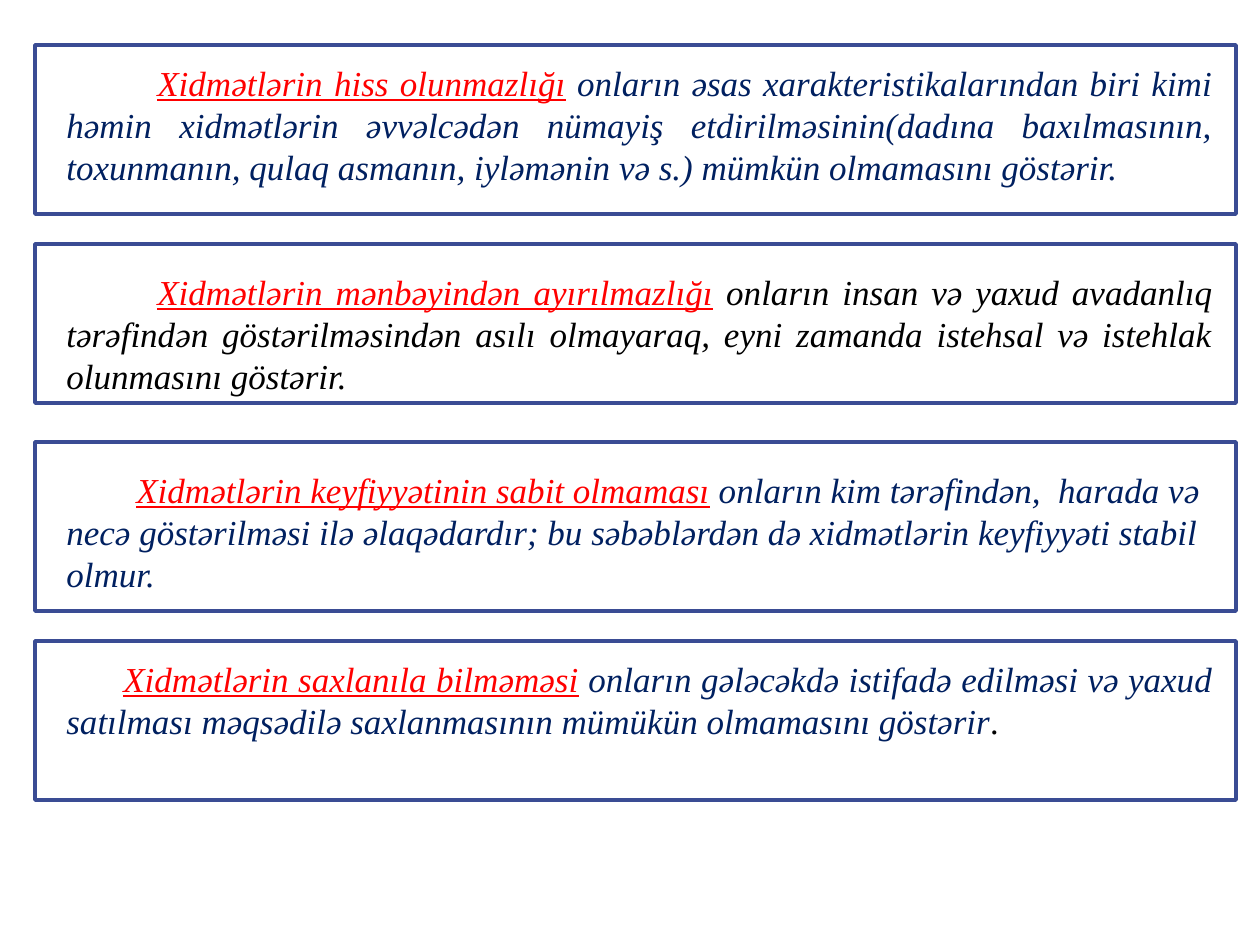
from dataclasses import dataclass

from pptx import Presentation
from pptx import util as u
from pptx.dml import color
from pptx.enum import shapes, text

PX = u.Inches(1) / 126


def emu(px):
    return u.Emu(round(px * PX))


def rgb(value):
    return color.RGBColor.from_string(value)


@dataclass(frozen=True)
class Theme:
    font: str = "Times New Roman"
    size: int = 20
    term: str = "FF0000"
    navy: str = "002060"
    black: str = "000000"
    panel: str = "FFFFFF"
    border: str = "3A4C94"
    border_width: int = 2


class SlideBuilder:
    def __init__(self, slide, theme):
        self.slide = slide
        self.theme = theme

    def panel(self, left, top, width, height):
        shape = self.slide.shapes.add_shape(
            shapes.MSO_SHAPE.RECTANGLE, *map(emu, (left, top, width, height)))
        shape.shadow.inherit = False
        shape.fill.solid()
        shape.fill.fore_color.rgb = rgb(self.theme.panel)
        shape.line.color.rgb = rgb(self.theme.border)
        shape.line.width = u.Pt(self.theme.border_width)

    def definition(self, left, top, width, height, indent, alignment, runs):
        shape = self.slide.shapes.add_textbox(
            *map(emu, (left, top, width, height)))
        frame = shape.text_frame
        frame.word_wrap = True
        frame.auto_size = text.MSO_AUTO_SIZE.SHAPE_TO_FIT_TEXT
        paragraph = frame.paragraphs[0]
        paragraph.alignment = alignment
        properties = paragraph._p.get_or_add_pPr()
        properties.set("marL", "0")
        properties.set("indent", str(emu(indent)))
        for wording, run_color in runs:
            self.run(paragraph, wording, run_color)

    def run(self, paragraph, wording, run_color):
        run = paragraph.add_run()
        run.text = wording
        font = run.font
        font.name = self.theme.font
        font.size = u.Pt(self.theme.size)
        font.italic = True
        font.underline = run_color == self.theme.term
        font.color.rgb = rgb(run_color)


def main():
    presentation = Presentation()
    presentation.slide_width = emu(1260)
    presentation.slide_height = emu(945)
    slide = presentation.slides.add_slide(presentation.slide_layouts[6])
    theme = Theme()
    builder = SlideBuilder(slide, theme)
    justified, left = text.PP_ALIGN.JUSTIFY, text.PP_ALIGN.LEFT

    definitions = [
        (169, 10, 140, 91, justified, [
            ("Xidmətlərin hiss olunmazlığı", theme.term),
            (" onların əsas xarakteristikalarından biri kimi həmin xidmətlərin "
             "əvvəlcədən nümayiş etdirilməsinin(dadına baxılmasının, toxunmanın, "
             "qulaq asmanın, iyləmənin və s.) mümkün olmamasını göstərir.",
             theme.navy)]),
        (159, 20, 140, 91, justified, [
            ("Xidmətlərin mənbəyindən ayırılmazlığı", theme.term),
            (" onların insan və yaxud avadanlıq tərəfindən göstərilməsindən asılı "
             "olmayaraq, eyni zamanda istehsal və istehlak olunmasını göstərir.",
             theme.black)]),
        (169, 20, 140, 70, left, [
            ("Xidmətlərin keyfiyyətinin sabit olmaması", theme.term),
            (" onların kim tərəfindən,  harada və necə göstərilməsi ilə "
             "əlaqədardır; bu səbəblərdən də xidmətlərin keyfiyyəti stabil olmur.",
             theme.navy)]),
        (159, 10, 97, 57, justified, [
            ("Xidmətlərin saxlanıla bilməməsi", theme.term),
            (" onların gələcəkdə istifadə edilməsi və yaxud satılması məqsədilə "
             "saxlanmasının mümükün olmamasını göstərir", theme.navy),
            (".", theme.black)]),
    ]
    first_top, last_top = 45, 641
    pitch = (last_top - first_top) / (len(definitions) - 1)
    for index, (height, offset, text_height, indent, alignment, runs) in enumerate(definitions):
        top = round(first_top + index * pitch)
        builder.panel(35, top, 1201, height)
        builder.definition(54, top + offset, 1171, text_height, indent, alignment, runs)

    presentation.save("out.pptx")


if __name__ == "__main__":
    main()
